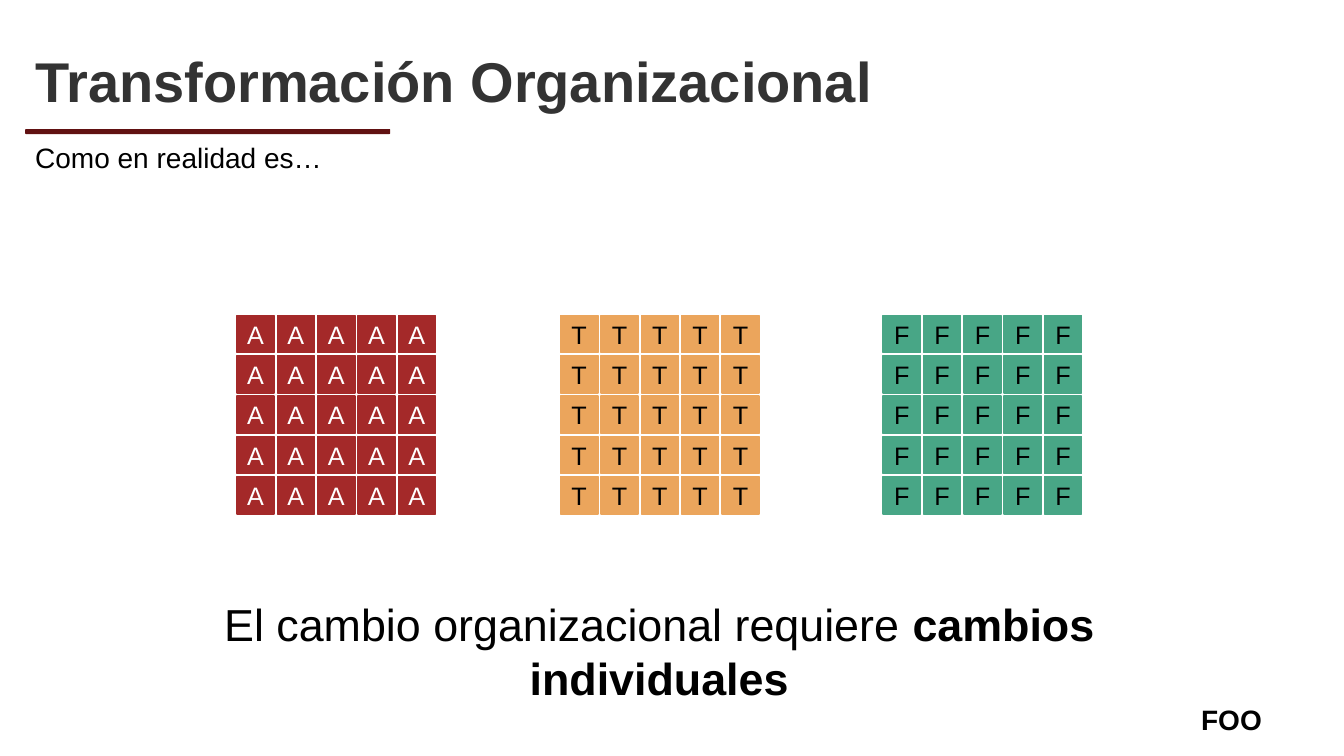
from dataclasses import dataclass

from pptx import Presentation
from pptx.dml.color import RGBColor
from pptx.enum.shapes import MSO_SHAPE as Shape
from pptx.enum.text import MSO_ANCHOR as Anchor, MSO_AUTO_SIZE as Fit, PP_ALIGN as Align
from pptx.util import Pt

SCALE = 9144


@dataclass(frozen=True)
class Theme:
    font: str = "Arial"
    dark: str = "333333"
    black: str = "000000"
    white: str = "FFFFFF"
    rule: str = "611112"
    red: str = "A42929"
    amber: str = "EBA55C"
    green: str = "48A686"
    title: int = 40
    claim: int = 32
    note: int = 20
    cell: int = 18


@dataclass(frozen=True)
class Box:
    left: int
    top: int
    width: int
    height: int

    def emu(self) -> tuple[int, ...]:
        return tuple(n * SCALE for n in (self.left, self.top, self.width, self.height))


@dataclass(frozen=True)
class Grid:
    letter: str
    left: int
    fill: str
    ink: str


THEME = Theme()
SIDE, STEP, COUNT, TOP = 37, 40, 5, 313
GRIDS = (
    Grid("A", 235, THEME.red, THEME.white),
    Grid("T", 556, THEME.amber, THEME.black),
    Grid("F", 876, THEME.green, THEME.black),
)


def write(frame, text: str, *, size: int, color: str = THEME.black, bold: bool = False,
          strong: str = "", align=Align.LEFT, anchor=Anchor.TOP, space: float = 1.0) -> None:
    frame.word_wrap = True
    frame.auto_size = Fit.NONE
    frame.vertical_anchor = anchor
    para = frame.paragraphs[0]
    para.alignment = align
    para.line_spacing = space
    for part, heavy in ((text, bold), (strong, True)):
        if part:
            run = para.add_run()
            run.text = part
            run.font.name = THEME.font
            run.font.size = Pt(size)
            run.font.bold = heavy
            run.font.color.rgb = RGBColor.from_string(color)


def label(slide, box: Box, text: str, **style) -> None:
    write(slide.shapes.add_textbox(*box.emu()).text_frame, text, **style)


def block(slide, kind, box: Box, fill: str):
    shape = slide.shapes.add_shape(kind, *box.emu())
    shape.shadow.inherit = False
    shape.fill.solid()
    shape.fill.fore_color.rgb = RGBColor.from_string(fill)
    shape.line.fill.background()
    return shape


def draw(slide, grid: Grid) -> None:
    for row in range(COUNT):
        for col in range(COUNT):
            box = Box(grid.left + col * STEP, TOP + row * STEP, SIDE, SIDE)
            cell = block(slide, Shape.RECTANGLE, box, grid.fill)
            cell.line.color.rgb = RGBColor.from_string(grid.fill)
            cell.line.width = Pt(1)
            frame = cell.text_frame
            frame.margin_left = frame.margin_right = 0
            write(frame, grid.letter, size=THEME.cell, color=grid.ink,
                  align=Align.CENTER, anchor=Anchor.MIDDLE)


def main() -> None:
    deck = Presentation()
    deck.slide_width, deck.slide_height = 1333 * SCALE, 750 * SCALE
    slide = deck.slides.add_slide(deck.slide_layouts[5])

    title = slide.shapes.title
    title.left, title.top, title.width, title.height = Box(25, 25, 1089, 94).emu()
    write(title.text_frame, "Transformación Organizacional", size=THEME.title,
          color=THEME.dark, bold=True, anchor=Anchor.BOTTOM, space=0.9)

    label(slide, Box(1123, 692, 197, 44), "FOO", size=THEME.note, bold=True,
          align=Align.CENTER)
    block(slide, Shape.ROUNDED_RECTANGLE, Box(25, 128, 362, 5), THEME.rule)
    for grid in GRIDS:
        draw(slide, grid)
    label(slide, Box(117, 587, 1074, 118), "El cambio organizacional requiere ",
          strong="cambios individuales", size=THEME.claim, align=Align.CENTER)
    label(slide, Box(25, 134, 407, 44), "Como en realidad es…", size=THEME.note)

    deck.save("out.pptx")


if __name__ == "__main__":
    main()
